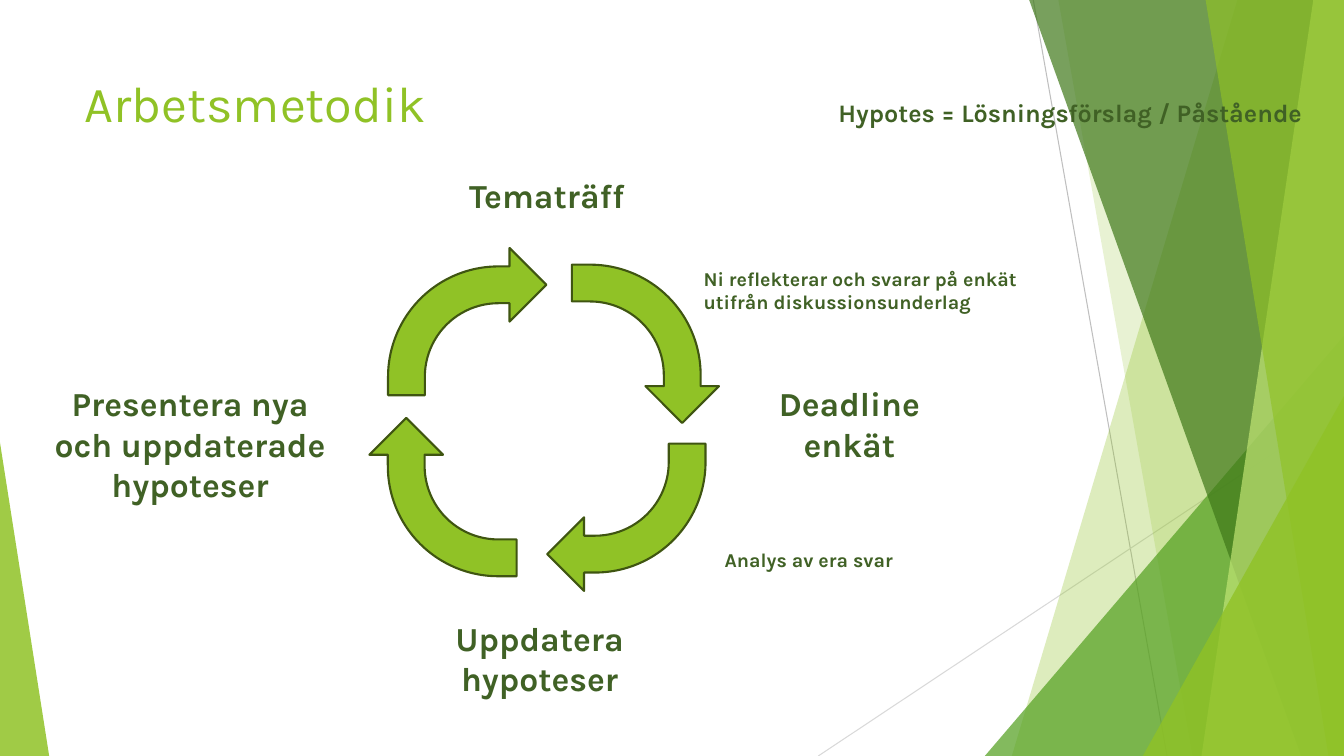
from lxml import etree
from pptx import Presentation
from pptx import util as u
from pptx.dml.color import RGBColor
from pptx.enum import shapes, text
from pptx.oxml.ns import qn

LIME = RGBColor(0x90, 0xC2, 0x26)
PALE = RGBColor(0xC0, 0xE4, 0x74)
GREEN = RGBColor(0x54, 0xA0, 0x21)
DARK = RGBColor(0x3F, 0x78, 0x19)
EDGE = RGBColor(0x3F, 0x55, 0x11)
INK = RGBColor(0x40, 0x61, 0x25)
GREY = RGBColor(0xBF, 0xBF, 0xBF)
SILVER = RGBColor(0xD9, 0xD9, 0xD9)
WIDE, HIGH = 33.87, 19.05
CENTER = text.PP_ALIGN.CENTER
LEFT = text.PP_ALIGN.LEFT


def write(frame, words, size=24, color=INK, bold=True, align=CENTER, font="Karla"):
    frame.word_wrap = True
    frame.vertical_anchor = text.MSO_ANCHOR.TOP
    frame.text = words
    for para in frame.paragraphs:
        para.alignment = align
        face = para.runs[0].font
        face.name, face.size, face.bold = font, u.Pt(size), bold
        face.color.rgb = color


class Deck:
    def __init__(self):
        self.file = Presentation()
        self.file.slide_width, self.file.slide_height = u.Cm(WIDE), u.Cm(HIGH)
        self.slide = self.file.slides.add_slide(self.file.slide_layouts[5])
        self.shapes = self.slide.shapes

    def paint(self, shape, color, alpha=100):
        shape.shadow.inherit = False
        shape.fill.solid()
        shape.fill.fore_color.rgb = color
        shape.line.fill.background()
        if alpha < 100:
            tint = shape.fill._xPr.find(qn("a:solidFill"))[0]
            etree.SubElement(tint, qn("a:alpha")).set("val", str(alpha * 1000))

    def line(self, x1, y1, x2, y2, color):
        rule = self.shapes.add_connector(
            shapes.MSO_CONNECTOR.STRAIGHT, *map(u.Cm, (x1, y1, x2, y2)))
        rule.line.color.rgb = color
        rule.line.width = u.Pt(0.75)
        etree.SubElement(rule._element.spPr, qn("a:effectLst"))

    def band(self, top, base, color, alpha):
        form = self.shapes.build_freeform(u.Cm(top), u.Cm(-0.02))
        form.add_line_segments([(u.Cm(WIDE), u.Cm(-0.02)), (u.Cm(WIDE), u.Cm(HIGH)),
                                (u.Cm(base), u.Cm(HIGH))], close=True)
        self.paint(form.convert_to_shape(), color, alpha)

    def wedge(self, left, wide, high, tip, color, alpha):
        shape = self.shapes.add_shape(
            shapes.MSO_SHAPE.ISOSCELES_TRIANGLE,
            *map(u.Cm, (left, HIGH - high, wide, high)))
        shape.adjustments[0] = tip
        self.paint(shape, color, alpha)

    def arrow(self, left, top, turn):
        shape = self.shapes.add_shape(
            shapes.MSO_SHAPE.BENT_ARROW, *map(u.Cm, (left, top, 3.99, 3.71)))
        for spot, value in enumerate((0.25, 0.25, 0.25, 0.75)):
            shape.adjustments[spot] = value
        shape.rotation = turn
        self.paint(shape, LIME)
        shape.line.color.rgb = EDGE
        shape.line.width = u.Pt(1.5)

    def label(self, words, left, top, wide, high, **style):
        box = self.shapes.add_textbox(*map(u.Cm, (left, top, wide, high)))
        write(box.text_frame, words, **style)

    def title(self, words, left, top, wide, high):
        head = self.shapes.title
        head.left, head.top, head.width, head.height = map(u.Cm, (left, top, wide, high))
        write(head.text_frame, words, size=36, color=LIME, bold=False, align=LEFT)
        self.shapes._spTree.append(head._element)


def main():
    deck = Deck()
    deck.line(26.04, 0, 29.41, HIGH, GREY)
    deck.line(WIDE, 10.24, 20.62, HIGH, SILVER)
    deck.band(31.19, 25.5, LIME, 30)
    deck.band(26.67, 30.05, LIME, 20)
    deck.wedge(24.82, 9.05, 10.59, 1, GREEN, 72)
    deck.band(25.93, 32.79, DARK, 70)
    deck.band(33.1, 30.28, PALE, 70)
    deck.band(30.38, 33.48, LIME, 65)
    deck.wedge(28.8, 5.07, 9.07, 1, LIME, 80)
    deck.wedge(0, 1.24, 7.9, 0, LIME, 85)

    deck.title("Arbetsmetodik", 1.88, 1.7, 23.88, 3.66)

    for left, top, turn in ((9.78, 6.25, 0), (14.27, 6.81, 90),
                            (9.17, 10.67, 270), (13.79, 11.18, 180)):
        deck.arrow(left, top, turn)

    deck.label("Tematräff", 10.82, 4.29, 5.92, 1.27)
    deck.label("Deadline enkät", 18.8, 9.53, 5.21, 2.31)
    deck.label("Uppdatera hypoteser", 10.44, 15.44, 6.32, 2.31)
    deck.label("Presentera nya och uppdaterade hypoteser", 1.09, 9.53, 7.4, 3.33)
    deck.label("Hypotes = Lösningsförslag / Påstående",
               20.88, 2.34, 12.65, 1.02, size=18, align=LEFT)
    deck.label("Ni reflekterar och svarar på enkät\nutifrån diskussionsunderlag",
               17.48, 6.6, 8.66, 1.45, size=14, align=LEFT)
    deck.label("Analys av era svar", 17.78, 13.67, 5.21, 0.86, size=14)
    deck.file.save("out.pptx")


if __name__ == "__main__":
    main()
